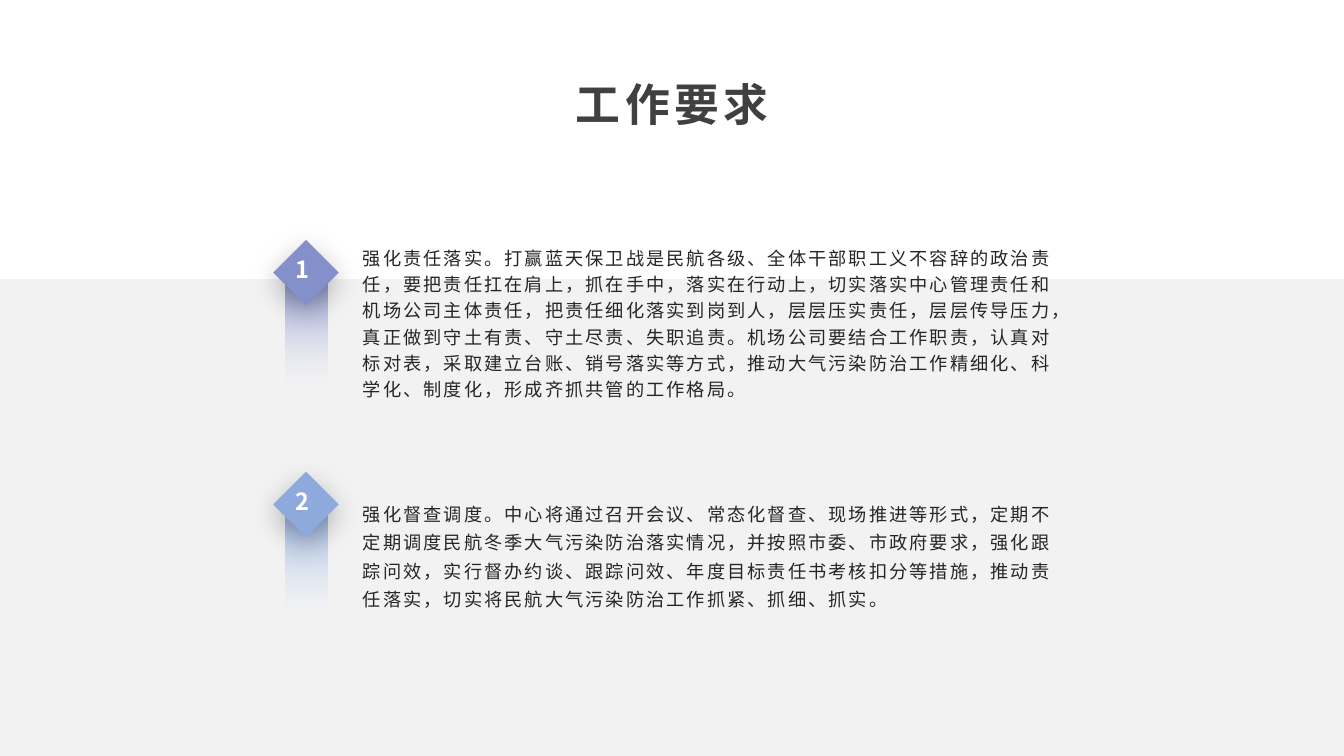
"""Build the work requirements slide with two numbered items."""
from lxml import etree
from pptx import Presentation
from pptx import util as u
from pptx.dml.color import RGBColor
from pptx.enum import shapes, text
from pptx.oxml import parse_xml
from pptx.oxml.ns import qn

WIDE, HIGH = u.Inches(13.33), u.Inches(7.5)
FONT = "Noto Sans CJK SC"
WHITE = RGBColor(0xFF, 0xFF, 0xFF)
PALE = RGBColor(0xF2, 0xF2, 0xF2)
DARK = RGBColor(0x40, 0x40, 0x40)
INK = RGBColor(0x26, 0x26, 0x26)
VIOLET = RGBColor(0x85, 0x90, 0xCA)
BLUE = RGBColor(0x8E, 0xAA, 0xDC)
FIRST, PITCH = 31.73, 30.67
SHADE = (
    '<a:outerShdw xmlns:a="http://schemas.openxmlformats.org/drawingml/2006/main"'
    ' blurRad="254000" dist="76200" dir="5400000" algn="t" rotWithShape="0">'
    '<a:srgbClr val="000000"><a:alpha val="27000"/></a:srgbClr></a:outerShdw>'
)
ITEMS = [
    (VIOLET, 18.75, "强化责任落实。打赢蓝天保卫战是民航各级、全体干部职工义不容辞的政治责任，"
     "要把责任扛在肩上，抓在手中，落实在行动上，切实落实中心管理责任和机场公司主体责任，"
     "把责任细化落实到岗到人，层层压实责任，层层传导压力，真正做到守土有责、守土尽责、失职追责。"
     "机场公司要结合工作职责，认真对标对表，采取建立台账、销号落实等方式，"
     "推动大气污染防治工作精细化、科学化、制度化，形成齐抓共管的工作格局。"),
    (BLUE, 20.3, "强化督查调度。中心将通过召开会议、常态化督查、现场推进等形式，"
     "定期不定期调度民航冬季大气污染防治落实情况，并按照市委、市政府要求，强化跟踪问效，"
     "实行督办约谈、跟踪问效、年度目标责任书考核扣分等措施，推动责任落实，"
     "切实将民航大气污染防治工作抓紧、抓细、抓实。"),
]


def place(left, top, width, height):
    """Turn percentages of the slide into lengths."""
    return (int(WIDE * left / 100), int(HIGH * top / 100),
            int(WIDE * width / 100), int(HIGH * height / 100))


def block(slide, kind, box, color):
    """Add a plain filled shape."""
    shape = slide.shapes.add_shape(kind, *place(*box))
    shape.shadow.inherit = False
    shape.fill.solid()
    shape.fill.fore_color.rgb = color
    shape.line.fill.background()
    return shape


def fade(slide, box, color):
    """Add a bar that fades out downwards."""
    bar = block(slide, shapes.MSO_SHAPE.RECTANGLE, box, color)
    bar.fill.gradient()
    bar.fill.gradient_angle = 90
    for stop, tone in zip(bar.fill.gradient_stops, (WHITE, color)):
        stop.color.rgb = tone
    clear = next(bar.element.iter(qn("a:srgbClr")))
    etree.SubElement(clear, qn("a:alpha")).set("val", "0")


def gem(slide, box, color):
    """Add a diamond with a soft shadow."""
    shape = block(slide, shapes.MSO_SHAPE.FLOWCHART_DECISION, box, color)
    next(shape.element.iter(qn("a:effectLst"))).append(parse_xml(SHADE))


def label(slide, box, words, size, color, bold=False, gap=0, lead=None):
    """Add a wrapped text box, centred vertically, and return its frame."""
    frame = slide.shapes.add_textbox(*place(*box)).text_frame
    frame.word_wrap = True
    frame.vertical_anchor = text.MSO_ANCHOR.MIDDLE
    frame.text = words
    para = frame.paragraphs[0]
    if lead:
        para.line_spacing = u.Pt(lead)
    font = para.runs[0].font
    font.name, font.size, font.bold = FONT, u.Pt(size), bold
    font.color.rgb = color
    props = para.runs[0].font.fill and para.runs[0]._r.get_or_add_rPr()
    etree.SubElement(props, qn("a:ea")).set("typeface", FONT)
    if gap:
        props.set("spc", str(int(gap * 100)))
    return frame


def title(slide, words):
    """Add the centred heading."""
    frame = label(slide, (3.75, 8.93, 92.5, 9.2), words, 32, DARK, True, 3, 42)
    frame.vertical_anchor = text.MSO_ANCHOR.TOP
    frame.margin_left = frame.margin_right = u.Inches(0.08)
    frame.margin_top = frame.margin_bottom = u.Inches(0.04)
    para = frame.paragraphs[0]
    para.alignment = text.PP_ALIGN.CENTER
    para.space_after = u.Pt(8)


def item(slide, index, color, lead, words):
    """Add one numbered requirement."""
    top = FIRST + index * PITCH
    label(slide, (26.26, top - 1.2, 53.49, 24), words, 13, INK, gap=1.5, lead=lead)
    fade(slide, (21.23, top + 4.93, 3.15, 16.27), color)
    gem(slide, (20.33, top, 4.88, 8.67), color)
    label(slide, (21.23, top + 0.53, 2.33, 6.67), str(index + 1), 16.8, WHITE, True)


def main():
    """Build and save the slide."""
    deck = Presentation()
    deck.slide_width, deck.slide_height = WIDE, HIGH
    slide = deck.slides.add_slide(deck.slide_layouts[6])
    block(slide, shapes.MSO_SHAPE.RECTANGLE, (0, 36.93, 100, 63.07), PALE)
    title(slide, "工作要求")
    for index, entry in enumerate(ITEMS):
        item(slide, index, *entry)
    deck.save("out.pptx")


if __name__ == "__main__":
    main()
